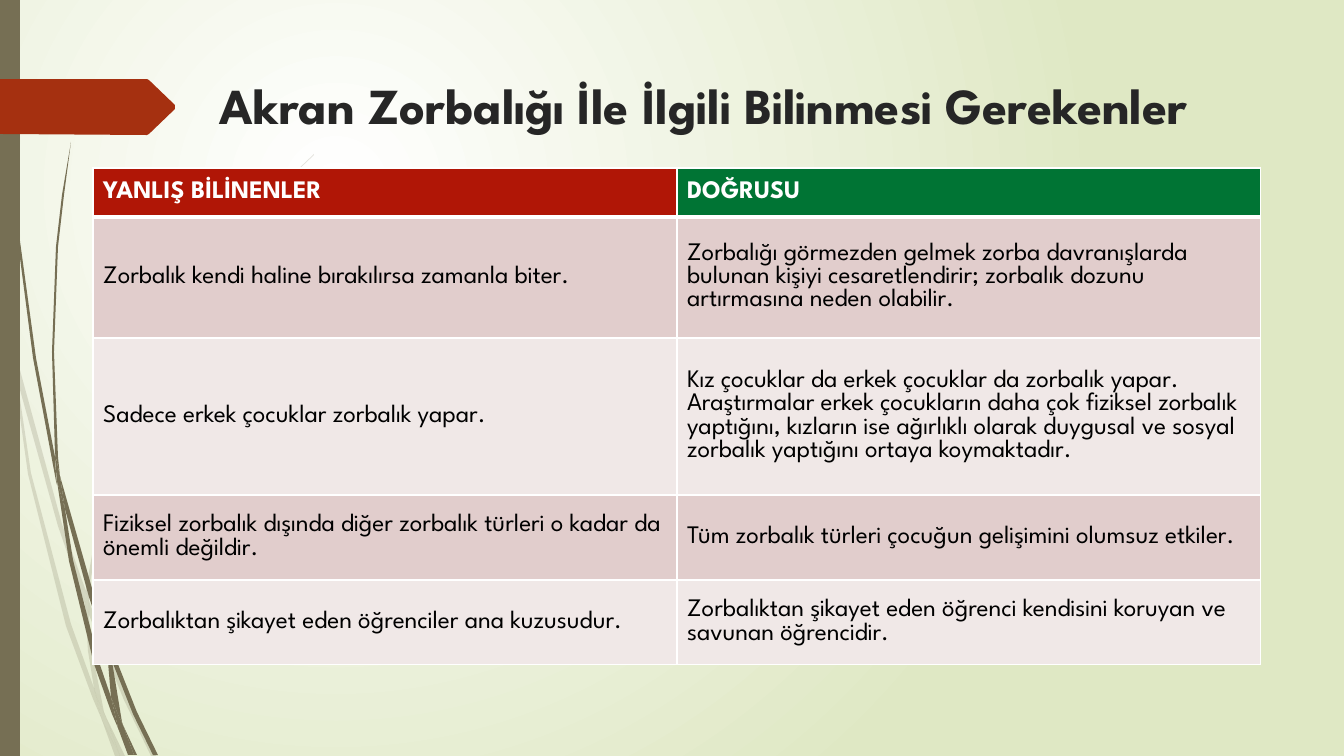
import pptx
import pptx.util
import pptx.dml.color
import pptx.enum.lang
import pptx.enum.shapes
import pptx.enum.text
import pptx.oxml
import pptx.oxml.ns
import lxml.etree

SCALE = 12192000 / 1344
FONT = "League Spartan"
COLORS = {
    "white": "FFFFFF", "lime": "DFE8C4", "olive": "766F54", "rust": "A53010",
    "ink": "262626", "black": "000000", "red": "B01606", "green": "007434",
    "rose": "E1CDCC", "blush": "F0E8E7",
}
HEADS = [("YANLIŞ BİLİNENLER", "red"), ("DOĞRUSU", "green")]
ROWS = [
    ("Zorbalık kendi haline bırakılırsa zamanla biter.",
     "Zorbalığı görmezden gelmek zorba davranışlarda bulunan kişiyi "
     "cesaretlendirir; zorbalık dozunu artırmasına neden olabilir."),
    ("Sadece erkek çocuklar zorbalık yapar.",
     "Kız çocuklar da erkek çocuklar da zorbalık yapar. Araştırmalar erkek "
     "çocukların daha çok fiziksel zorbalık yaptığını, kızların ise ağırlıklı "
     "olarak duygusal ve sosyal zorbalık yaptığını ortaya koymaktadır."),
    ("Fiziksel zorbalık dışında diğer zorbalık türleri o kadar da önemli değildir.",
     "Tüm zorbalık türleri çocuğun gelişimini olumsuz etkiler."),
    ("Zorbalıktan şikayet eden öğrenciler ana kuzusudur.",
     "Zorbalıktan şikayet eden öğrenci kendisini koruyan ve savunan öğrencidir."),
]
HEIGHTS = [49, 121, 157, 85, 85]
ARROW = [(0, 79), (147, 79), (149, 80), (175, 105), (175, 109), (149, 134),
         (147, 135), (0, 134)]
PALE = [
    [(11, 353), (9, 325), (0, 284), (0, 301), (10, 347)],
    [(58, 526), (85, 604), (86, 591), (62, 524), (14, 348), (17, 379)],
    [(93, 612), (89, 601), (89, 615), (124, 700), (151, 756), (156, 756),
     (128, 698)],
    [(120, 756), (125, 756), (106, 717)],
    [(94, 688), (71, 624), (31, 473), (17, 379), (11, 353), (28, 474),
     (66, 626), (93, 699), (102, 720), (100, 713)],
    [(85, 604), (88, 651), (94, 688), (97, 698), (106, 717), (104, 712),
     (92, 651), (89, 615), (89, 613)],
    [(89, 589), (111, 466), (161, 352), (231, 247), (270, 200), (292, 176),
     (314, 155), (314, 154), (291, 176), (270, 199), (230, 246), (159, 351),
     (108, 465), (86, 589), (86, 591), (89, 601)],
    [(102, 720), (115, 756), (120, 756)],
    [(89, 613), (89, 615), (89, 601), (86, 591), (85, 604)],
    [(97, 698), (94, 688), (100, 713), (102, 720), (120, 756), (106, 717)],
]
DARK = [
    [(7, 111), (17, 235), (33, 358), (56, 481), (57, 485), (55, 461),
     (55, 457), (36, 358), (19, 234), (8, 110), (5, 48), (4, 0), (3, 0), (4, 48)],
    [(89, 597), (107, 650), (107, 638), (107, 636), (94, 595), (60, 476),
     (65, 509)],
    [(114, 654), (111, 646), (112, 661), (133, 714), (153, 755), (158, 755),
     (137, 712)],
    [(111, 697), (99, 662), (73, 560), (65, 509), (57, 481), (69, 561),
     (94, 664), (112, 714), (118, 728), (117, 723)],
    [(60, 476), (58, 457), (54, 352), (58, 247), (64, 195), (71, 142),
     (62, 195), (56, 247), (52, 352), (55, 453)],
    [(134, 755), (137, 755), (123, 725)],
    [(57, 481), (65, 509), (60, 476), (55, 453), (55, 457)],
    [(112, 638), (126, 556), (159, 480), (207, 409), (233, 377), (247, 362),
     (263, 347), (247, 361), (233, 376), (206, 408), (157, 478), (123, 555),
     (107, 636), (111, 646)],
    [(118, 728), (128, 755), (132, 755)],
    [(107, 650), (111, 697), (117, 712), (123, 725), (122, 722), (112, 661),
     (110, 656)],
    [(107, 650), (110, 656), (112, 661), (111, 646), (107, 636), (107, 638)],
    [(117, 712), (111, 697), (117, 723), (118, 728), (131, 755), (134, 755),
     (123, 725)],
]


def px(num):
    """Turn px into EMU."""
    return round(num * SCALE)


def hue(name):
    """Look up a named colour."""
    return pptx.dml.color.RGBColor.from_string(COLORS[name])


def write(frame, text, size=18, color="black", bold=False, align=None):
    """Put formatted text in a frame."""
    para = frame.paragraphs[0]
    para.alignment = align
    run = para.add_run()
    run.text = text
    run.font.name = FONT
    run.font.size = pptx.util.Pt(size)
    run.font.bold = bold
    run.font.color.rgb = hue(color)
    run.font.language_id = pptx.enum.lang.MSO_LANGUAGE_ID.TURKISH


def paint(shape, color, alpha=100):
    """Fill a shape flatly, with no line or shadow."""
    shape.shadow.inherit = False
    shape.line.fill.background()
    shape.fill.solid()
    shape.fill.fore_color.rgb = hue(color)
    if alpha < 100:
        tint = shape._element.spPr.find(".//" + pptx.oxml.ns.qn("a:srgbClr"))
        lxml.etree.SubElement(tint, pptx.oxml.ns.qn("a:alpha"), val=str(alpha * 1000))


def form(slide, spots, color, alpha=100):
    """Draw a closed outline."""
    first, *rest = [(px(x), px(y)) for x, y in spots]
    pen = slide.shapes.build_freeform(*first)
    pen.add_line_segments(rest, close=True)
    paint(pen.convert_to_shape(), color, alpha)


def glow(slide):
    """Give the slide a round gradient."""
    fill = slide.background.fill
    fill.gradient()
    for stop, name in zip(fill.gradient_stops, ("white", "lime")):
        stop.color.rgb = hue(name)
    line = slide._element.find(".//" + pptx.oxml.ns.qn("a:lin"))
    ring = pptx.oxml.parse_xml(
        f'<a:path {pptx.oxml.ns.nsdecls("a")} path="circle">'
        '<a:fillToRect l="50000" t="50000" r="100000" b="100000"/></a:path>')
    line.getparent().replace(line, ring)


def head(slide, text):
    """Place the title."""
    title = slide.shapes.title
    title.left, title.top, title.width, title.height = map(px, (140, 69, 1128, 98))
    title.text_frame.vertical_anchor = pptx.enum.text.MSO_ANCHOR.TOP
    write(title.text_frame, text, size=36, color="ink", bold=True,
          align=pptx.enum.text.PP_ALIGN.CENTER)


def edge(box, **widths):
    """Draw white borders of given point widths on a cell."""
    props = box._tc.get_or_add_tcPr()
    for spot, side in enumerate("LRTB"):
        width = pptx.util.Pt(widths.get(side, 1))
        props.insert(spot, pptx.oxml.parse_xml(
            f'<a:ln{side} {pptx.oxml.ns.nsdecls("a")} w="{width}"><a:solidFill>'
            f'<a:srgbClr val="{COLORS["white"]}"/></a:solidFill></a:ln{side}>'))


def cell(grid, row, col, text, fill, **style):
    """Fill one table cell."""
    box = grid.cell(row, col)
    box.fill.solid()
    box.fill.fore_color.rgb = hue(fill)
    box.vertical_anchor = pptx.enum.text.MSO_ANCHOR.MIDDLE
    edge(box, T=3 if row == 1 else 1, B=3 if row == 0 else 1)
    write(box.text_frame, text, **style)


def table(slide):
    """Add the table of myths and facts."""
    grid = slide.shapes.add_table(
        len(HEIGHTS), len(HEADS), px(93), px(168), px(1168), px(sum(HEIGHTS))).table
    for row, height in zip(grid.rows, HEIGHTS):
        row.height = px(height)
    for col, (text, fill) in enumerate(HEADS):
        cell(grid, 0, col, text, fill, color="white", bold=True)
    for row, texts in enumerate(ROWS, 1):
        for col, text in enumerate(texts):
            cell(grid, row, col, text, "rose" if row % 2 else "blush")


def main():
    """Build the slide and save it."""
    deck = pptx.Presentation()
    deck.slide_width, deck.slide_height = px(1344), px(756)
    slide = deck.slides.add_slide(deck.slide_layouts[5])
    glow(slide)
    for spots in PALE:
        form(slide, spots, "olive", alpha=20)
    for spots in DARK:
        form(slide, spots, "olive")
    bar = slide.shapes.add_shape(
        pptx.enum.shapes.MSO_SHAPE.RECTANGLE, 0, 0, px(20), px(756))
    paint(bar, "olive")
    form(slide, ARROW, "rust")
    head(slide, "Akran Zorbalığı İle İlgili Bilinmesi Gerekenler")
    table(slide)
    deck.save("out.pptx")


if __name__ == "__main__":
    main()
